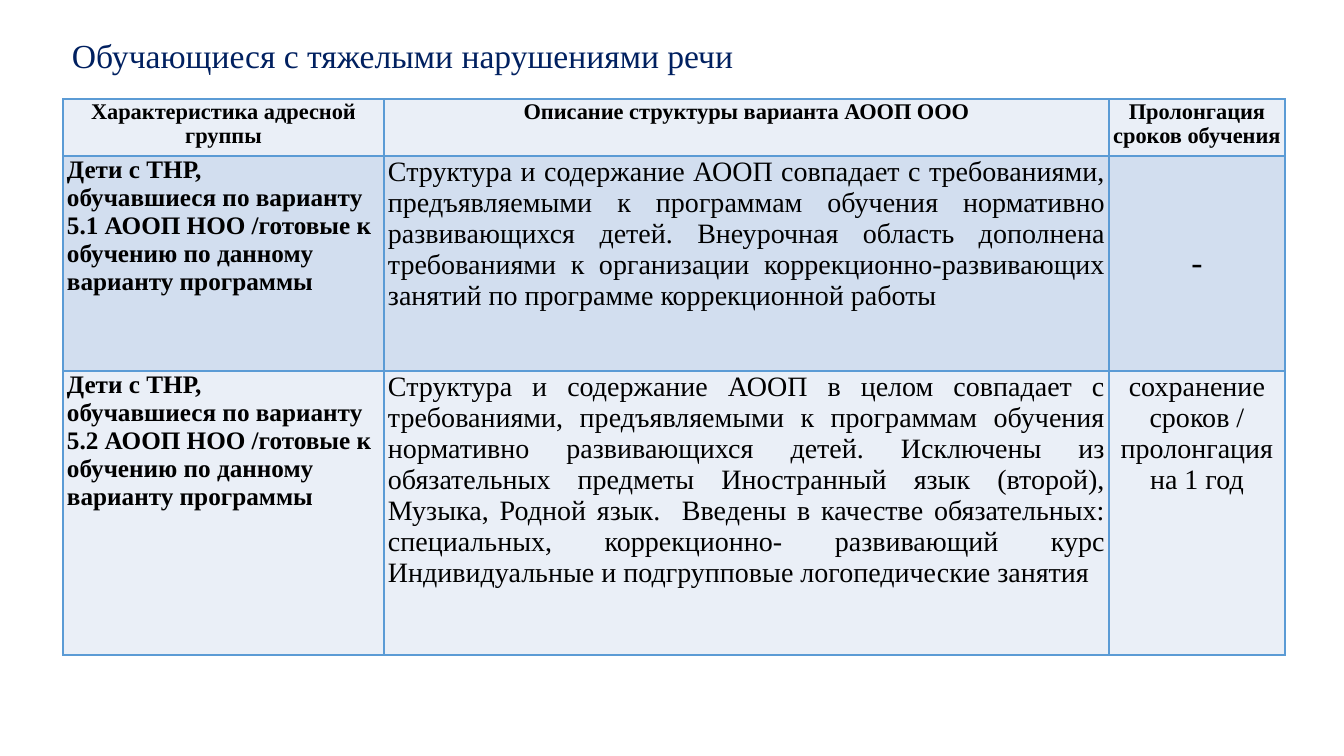
"""Builds a slide on study programme variants for pupils with severe speech disorders."""
import pptx
import pptx.dml.color
import pptx.enum.text
import pptx.oxml
import pptx.oxml.ns
import pptx.util

EMU_PER_PX = 914400 / 100.8
FONT = "Times New Roman"
COLOURS = {
    "title": "002060",
    "text": "000000",
    "border": "5B9BD5",
    "light": "EAEFF7",
    "dark": "D2DEEF",
}
COLUMN_WIDTHS = (321, 725, 176)
ROW_HEIGHTS = (57, 215, 284)
ROW_FILLS = ("light", "dark", "light")
ALIGN = pptx.enum.text.PP_ALIGN
ANCHOR = pptx.enum.text.MSO_ANCHOR

HEADINGS = (
    "Характеристика адресной группы",
    "Описание структуры варианта АООП ООО",
    "Пролонгация сроков обучения",
)
VARIANTS = (
    (
        "5.1",
        "Структура и содержание АООП совпадает с требованиями, предъявляемыми к программам "
        "обучения нормативно развивающихся детей. Внеурочная область дополнена требованиями "
        "к организации коррекционно-развивающих занятий по программе коррекционной работы",
        "-", 24, ANCHOR.MIDDLE,
    ),
    (
        "5.2",
        "Структура и содержание АООП в целом совпадает с требованиями, предъявляемыми к "
        "программам обучения нормативно развивающихся детей. Исключены из обязательных "
        "предметы Иностранный язык (второй), Музыка, Родной язык.  Введены в качестве "
        "обязательных: специальных, коррекционно- развивающий курс Индивидуальные и "
        "подгрупповые логопедические занятия",
        "сохранение сроков / пролонгация на 1 год", 20, ANCHOR.TOP,
    ),
)


def px(length):
    """Turn pixels into EMU."""
    return pptx.util.Emu(round(length * EMU_PER_PX))


def rgb(name):
    """Look up a named colour."""
    return pptx.dml.color.RGBColor.from_string(COLOURS[name])


def write(frame, lines, size, align, bold=False, colour="text"):
    """Write each line as a paragraph with one run."""
    for index, line in enumerate(lines):
        paragraph = frame.add_paragraph() if index else frame.paragraphs[0]
        paragraph.alignment = align
        run = paragraph.add_run()
        run.text = line
        run.font.name = FONT
        run.font.size = pptx.util.Pt(size)
        run.font.bold = bold
        run.font.color.rgb = rgb(colour)


def style_cell(cell, fill, anchor=ANCHOR.TOP):
    """Set the margins, borders, fill and anchor of a cell."""
    cell.margin_left = cell.margin_right = px(4)
    cell.margin_top = cell.margin_bottom = 0
    cell.vertical_anchor = anchor
    properties = cell._tc.get_or_add_tcPr()
    for side in ("lnL", "lnR", "lnT", "lnB"):
        properties.append(pptx.oxml.parse_xml(
            f'<a:{side} {pptx.oxml.ns.nsdecls("a")} w="{pptx.util.Pt(1)}"><a:solidFill>'
            f'<a:srgbClr val="{COLOURS["border"]}"/></a:solidFill></a:{side}>'
        ))
    cell.fill.solid()
    cell.fill.fore_color.rgb = rgb(fill)


def add_title(slide):
    """Add the slide heading."""
    title = slide.shapes.add_textbox(px(62), px(-15), px(1159), px(146))
    frame = title.text_frame
    frame.word_wrap = True
    frame.vertical_anchor = ANCHOR.MIDDLE
    write(frame, ["Обучающиеся с тяжелыми нарушениями речи"], 24, ALIGN.LEFT, colour="title")
    frame.paragraphs[0].line_spacing = 0.9


def add_variants_table(slide):
    """Add the table of programme variants."""
    table = slide.shapes.add_table(
        len(ROW_HEIGHTS), len(COLUMN_WIDTHS), px(63), px(99),
        px(sum(COLUMN_WIDTHS)), px(sum(ROW_HEIGHTS)),
    ).table
    table.first_row = table.horz_banding = False
    for column, width in zip(table.columns, COLUMN_WIDTHS):
        column.width = px(width)
    for row, height, fill in zip(table.rows, ROW_HEIGHTS, ROW_FILLS):
        row.height = px(height)
        for cell in row.cells:
            style_cell(cell, fill)
    for column, heading in enumerate(HEADINGS):
        write(table.cell(0, column).text_frame, [heading], 16, ALIGN.CENTER, bold=True)
    for row, (variant, structure, extension, size, anchor) in enumerate(VARIANTS, 1):
        group = [
            "Дети с ТНР,",
            f"обучавшиеся по варианту {variant} АООП НОО /готовые к обучению "
            "по данному варианту программы",
        ]
        write(table.cell(row, 0).text_frame, group, 18, ALIGN.LEFT, bold=True)
        write(table.cell(row, 1).text_frame, [structure], 20, ALIGN.JUSTIFY)
        write(table.cell(row, 2).text_frame, [extension], size, ALIGN.CENTER)
        table.cell(row, 2).vertical_anchor = anchor


def main():
    """Build and save the presentation."""
    deck = pptx.Presentation()
    deck.slide_width, deck.slide_height = px(1344), px(756)
    slide = deck.slides.add_slide(deck.slide_layouts[6])
    add_variants_table(slide)
    add_title(slide)
    deck.save("out.pptx")


if __name__ == "__main__":
    main()
